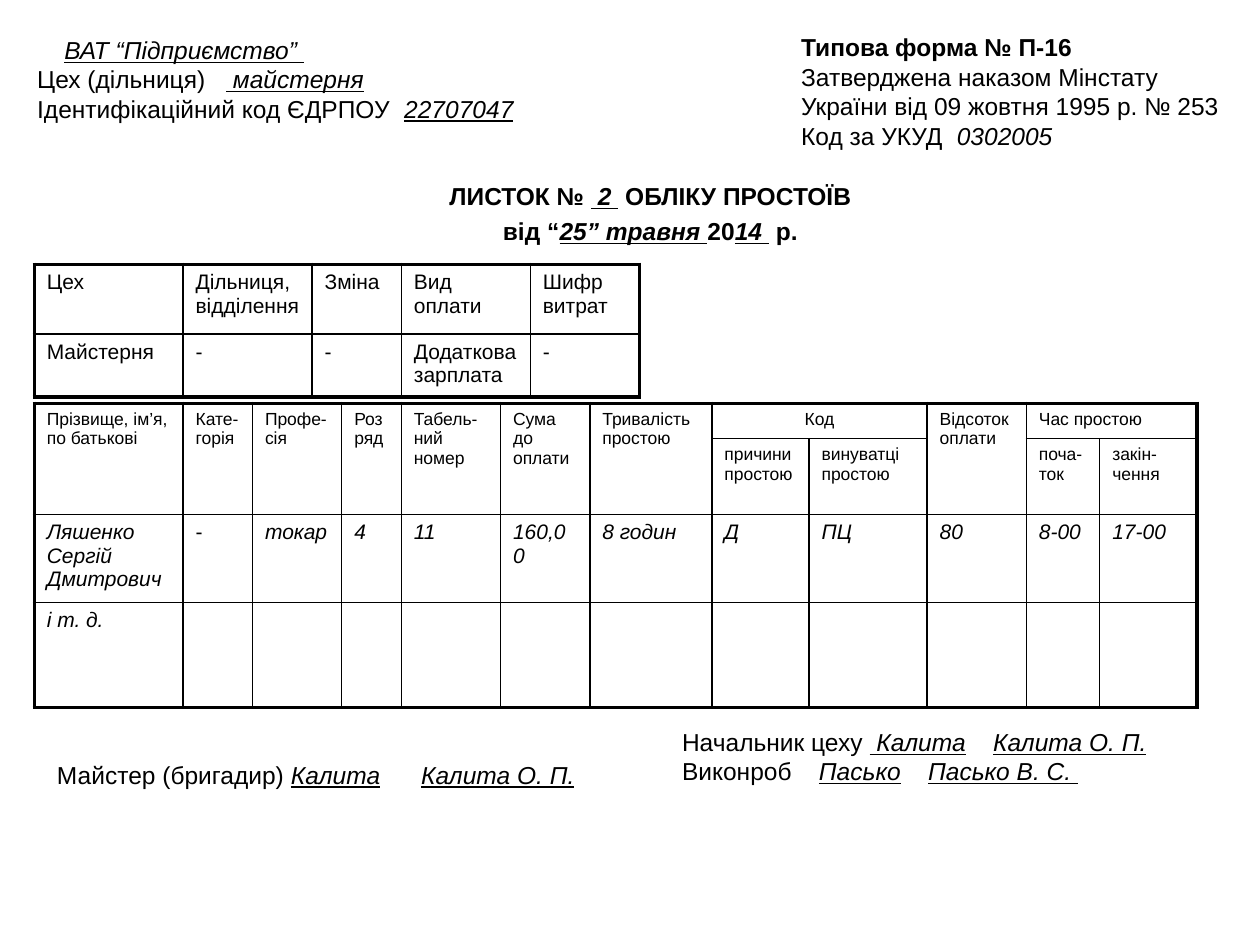
from lxml import etree
from pptx import Presentation
from pptx.dml.color import RGBColor
from pptx.enum.text import PP_ALIGN
from pptx.oxml.ns import qn
from pptx.util import Cm, Pt

CENTER = PP_ALIGN.CENTER
LEFT = PP_ALIGN.LEFT
COLORS = {"ink": "000000", "paper": "FFFFFF"}
FONT = "Arial"
THIN, THICK = Pt(1), Pt(2.25)

ORGANISATION = [
    [("\tВАТ “Підприємство” ", "iu")],
    [("Цех (дільниця)\t", ""), (" майстерня", "iu")],
    [("Ідентифікаційний код ЄДРПОУ\t", ""), ("22707047", "iu")],
]
APPROVAL = [
    [("Типова форма № П-16", "b")],
    [("Затверджена наказом Мінстату України від 09 жовтня 1995 р. № 253", "")],
    [("Код за УКУД\t", ""), ("0302005", "i")],
]
TITLE = [
    [("ЛИСТОК № ", "b"), (" 2 ", "biu"), (" ОБЛІКУ ПРОСТОЇВ", "b")],
    [("від “", "b"), ("25” травня ", "biu"), ("20", "b"),
     ("14 ", "biu"), (" р.", "b")],
]
FOREMAN = [[("Майстер (бригадир) ", ""), ("Калита\tКалита О. П.", "iu")]]
MANAGERS = [
    [("Начальник цеху ", ""), (" Калита\tКалита О. П.", "iu")],
    [("Виконроб\t", ""), ("Пасько\tПасько В. С. ", "iu")],
]

WORKSHOP_ROWS = [
    ["Цех", "Дільниця, відділення", "Зміна", "Вид оплати", "Шифр витрат"],
    ["Майстерня", "-", "-", "Додаткова зарплата", "-"],
]
DOWNTIME_ROWS = [
    ["Прізвище, ім’я, по батькові", "Кате-горія", "Профе-сія", "Розряд",
     "Табель-ний номер", "Сума до оплати", "Тривалість простою", "Код", "",
     "Відсоток оплати", "Час простою", ""],
    [""] * 7 + ["причини простою", "винуватці простою", "",
                "поча-ток", "закін-чення"],
    ["Ляшенко Сергій Дмитрович", "-", "токар", "4", "11", "160,00",
     "8 годин", "Д", "ПЦ", "80", "8-00", "17-00"],
    ["і т. д."] + [""] * 11,
]
CODE_COLUMN, TIME_COLUMN = 7, 10
TALL_HEADERS = [*range(CODE_COLUMN), 9]


def style_run(run, size, style=""):
    font = run.font
    font.name = FONT
    font.size = Pt(size)
    font.color.rgb = RGBColor.from_string(COLORS["ink"])
    font.bold = "b" in style
    font.italic = "i" in style
    font.underline = "u" in style


def set_tab_stops(paragraph, stops):
    properties = paragraph._p.get_or_add_pPr()
    tab_list = etree.SubElement(properties, qn("a:tabLst"))
    for stop in stops:
        etree.SubElement(tab_list, qn("a:tab"), pos=str(Cm(stop)), algn="l")


def add_lines(slide, box, lines, align=LEFT, gap=0, tab_stops=None):
    frame = slide.shapes.add_textbox(*map(Cm, box)).text_frame
    frame.word_wrap = True
    for index, line in enumerate(lines):
        paragraph = frame.paragraphs[0] if index == 0 else frame.add_paragraph()
        paragraph.alignment = align
        paragraph.space_before = Pt(gap)
        if tab_stops and tab_stops[index]:
            set_tab_stops(paragraph, tab_stops[index])
        for words, style in line:
            run = paragraph.add_run()
            run.text = words
            style_run(run, 14, style)


def set_borders(cell, widths):
    properties = cell._tc.get_or_add_tcPr()
    for side, width in zip("LRTB", widths):
        line = etree.SubElement(properties, qn(f"a:ln{side}"), w=str(width))
        fill = etree.SubElement(line, qn("a:solidFill"))
        etree.SubElement(fill, qn("a:srgbClr"), val=COLORS["ink"])


def add_grid(slide, left, top, widths, heights, rows):
    box = (left, top, sum(widths), sum(heights))
    table = slide.shapes.add_table(len(rows), len(widths), *map(Cm, box)).table
    table.first_row = False
    table.horz_banding = False
    for column, width in zip(table.columns, widths):
        column.width = Cm(width)
    for row, height in zip(table.rows, heights):
        row.height = Cm(height)
    return table


def fill_grid(table, rows, text_style):
    last_row, last_column = len(rows) - 1, len(rows[0]) - 1
    for r, row in enumerate(rows):
        for c, words in enumerate(row):
            cell = table.cell(r, c)
            right, bottom = c, r
            if cell.is_merge_origin:
                right += cell.span_width - 1
                bottom += cell.span_height - 1
            edges = (c == 0, right == last_column, r == 0, bottom == last_row)
            set_borders(cell, [THICK if edge else THIN for edge in edges])
            cell.fill.background()
            if words:
                cell.text_frame.text = words
                style_run(cell.text_frame.paragraphs[0].runs[0], *text_style(r, words))


def add_workshop_table(slide, left, top):
    widths = [3, 2.6, 1.8, 2.6, 2.2]
    table = add_grid(slide, left, top, widths, [1.4, 1.27], WORKSHOP_ROWS)
    fill_grid(table, WORKSHOP_ROWS, lambda r, words: (12, ""))


def add_downtime_table(slide, left, top):
    widths = [3, 1.4, 1.8, 1.2, 2, 1.8, 2.46, 1.96, 2.38, 2, 1.48, 1.96]
    table = add_grid(slide, left, top, widths, [0.71, 1.52, 1.78, 2.11], DOWNTIME_ROWS)
    for column in TALL_HEADERS:
        table.cell(0, column).merge(table.cell(1, column))
    for column in (CODE_COLUMN, TIME_COLUMN):
        table.cell(0, column).merge(table.cell(0, column + 1))

    def text_style(r, words):
        if r < 2:
            return 10, ""
        return 12, "" if words == "-" else "i"

    fill_grid(table, DOWNTIME_ROWS, text_style)
    table.cell(0, CODE_COLUMN).text_frame.paragraphs[0].alignment = CENTER


def add_heading(slide):
    add_lines(slide, (0.5, 0.58, 11.2, 2.03), ORGANISATION,
              tab_stops=[[0.55], [3.81], [7.4]])
    add_lines(slide, (15.9, 0.53, 9, 2.62), APPROVAL, tab_stops=[[], [], [3.14]])
    add_lines(slide, (7.5, 3.53, 11.22, 1.68), TITLE, CENTER, gap=3)


def add_signatures(slide):
    add_lines(slide, (0.9, 15.19, 11, 0.84), FOREMAN, tab_stops=[[7.34]])
    add_lines(slide, (13.5, 14.53, 10.6, 1.45), MANAGERS,
              tab_stops=[[6.27], [2.76, 4.96]])


def main():
    deck = Presentation()
    deck.slide_width, deck.slide_height = Cm(25.4), Cm(19.05)
    slide = deck.slides.add_slide(deck.slide_layouts[6])
    background = slide.background.fill
    background.solid()
    background.fore_color.rgb = RGBColor.from_string(COLORS["paper"])
    add_heading(slide)
    add_workshop_table(slide, 0.69, 5.33)
    add_downtime_table(slide, 0.69, 8.13)
    add_signatures(slide)
    deck.save("out.pptx")


if __name__ == "__main__":
    main()
